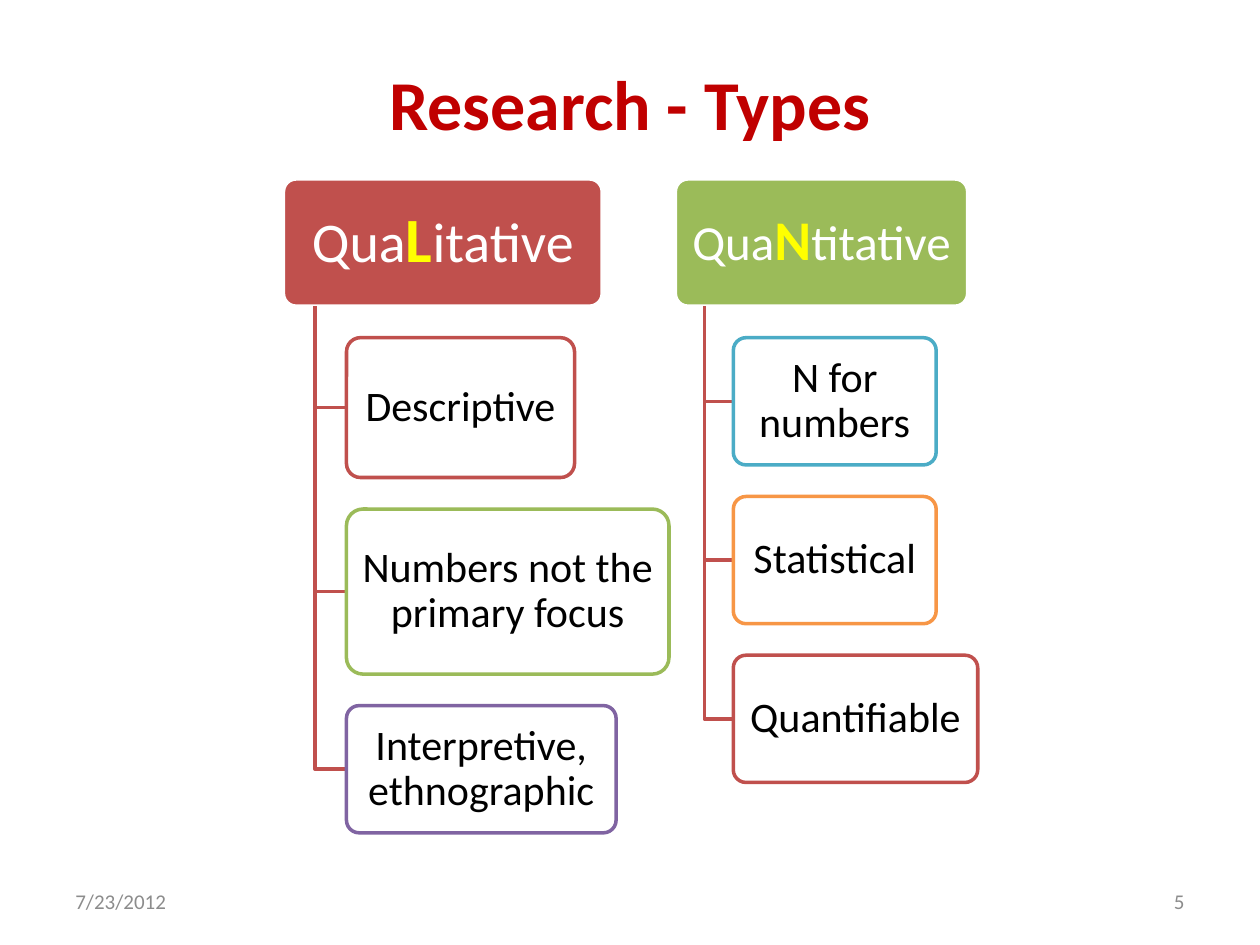
from dataclasses import dataclass

from pptx import Presentation, util as u
from pptx.dml.color import RGBColor
from pptx.enum import shapes as kinds, text as t

FONT = "Calibri"
RED, GREEN, PURPLE, TEAL, ORANGE = "C0504D", "9BBB59", "8064A2", "4BACC6", "F79646"
WHITE, BLACK, YELLOW, GREY = "FFFFFF", "000000", "FFFF00", "8C8C8C"
HEADER_TOP, ROW_HEIGHT, GAP = 1.42, 1.01, 0.25


@dataclass
class Run:
    text: str
    size: float
    color: str
    bold: bool = False


@dataclass
class Box:
    left: float
    top: float
    width: float
    height: float


@dataclass
class Trait:
    text: str
    width: float
    color: str
    height: float = ROW_HEIGHT


@dataclass
class Branch:
    left: float
    width: float
    stem: float
    trait_left: float
    color: str
    inset: float
    heading: list[Run]
    traits: list[Trait]


BRANCHES = [
    Branch(2.25, 2.53, 2.5, 2.75, RED, 0.07,
           [Run("Qua", 32, WHITE), Run("L", 36, YELLOW, True), Run("itative", 32, WHITE)],
           [Trait("Descriptive", 1.81, RED, 1.11),
            Trait("Numbers not the primary focus", 2.56, GREEN, 1.31),
            Trait("Interpretive, ethnographic", 2.14, PURPLE)]),
    Branch(5.36, 2.32, 5.59, 5.82, GREEN, 0.06,
           [Run("Qua", 28, WHITE), Run("N", 32, YELLOW, True), Run("titative", 28, WHITE)],
           [Trait("N for numbers", 1.61, TEAL),
            Trait("Statistical", 1.61, ORANGE),
            Trait("Quantifiable", 1.94, RED)]),
]


def rgb(color: str) -> RGBColor:
    return RGBColor.from_string(color)


def place(box: Box) -> list[int]:
    return [u.Inches(v) for v in (box.left, box.top, box.width, box.height)]


def write(frame, runs: list[Run], align) -> None:
    frame.word_wrap = True
    frame.vertical_anchor = t.MSO_ANCHOR.MIDDLE
    paragraph = frame.paragraphs[0]
    paragraph.alignment = align
    for part in runs:
        run = paragraph.add_run()
        run.text = part.text
        run.font.name = FONT
        run.font.size = u.Pt(part.size)
        run.font.bold = part.bold
        run.font.color.rgb = rgb(part.color)


def outline(shape, color: str) -> None:
    shape.shadow.inherit = False
    shape.line.color.rgb = rgb(color)
    shape.line.width = u.Pt(2)


def add_card(slide, box: Box, fill: str, line: str, runs: list[Run],
             inset: float, inset_top: float) -> None:
    card = slide.shapes.add_shape(kinds.MSO_SHAPE.ROUNDED_RECTANGLE, *place(box))
    card.adjustments[0] = 0.1
    card.fill.solid()
    card.fill.fore_color.rgb = rgb(fill)
    outline(card, line)
    frame = card.text_frame
    frame.margin_left = frame.margin_right = u.Inches(inset)
    frame.margin_top = frame.margin_bottom = u.Inches(inset_top)
    write(frame, runs, t.PP_ALIGN.CENTER)
    frame.paragraphs[0].line_spacing = 0.9


def add_elbow(slide, stem: float, top: float, right: float, bottom: float) -> None:
    builder = slide.shapes.build_freeform(u.Inches(stem), u.Inches(top))
    builder.add_line_segments(
        [(u.Inches(stem), u.Inches(bottom)), (u.Inches(right), u.Inches(bottom))], close=False)
    elbow = builder.convert_to_shape()
    elbow.fill.background()
    outline(elbow, RED)


def add_branch(slide, branch: Branch) -> None:
    add_card(slide, Box(branch.left, HEADER_TOP, branch.width, ROW_HEIGHT),
             branch.color, WHITE, branch.heading, branch.inset, 0.04)
    header_bottom = HEADER_TOP + ROW_HEIGHT
    top = header_bottom + GAP
    for trait in branch.traits:
        add_elbow(slide, branch.stem, header_bottom, branch.trait_left, top + trait.height / 2)
        add_card(slide, Box(branch.trait_left, top, trait.width, trait.height),
                 WHITE, trait.color, [Run(trait.text, 24, BLACK)], 0.05, 0.03)
        top += trait.height + GAP


def add_footer(slide, left: float, text: str, align) -> None:
    footer = slide.shapes.add_textbox(*place(Box(left, 6.95, 2.33, 0.4)))
    write(footer.text_frame, [Run(text, 12, GREY)], align)


def main() -> None:
    deck = Presentation()
    deck.slide_width, deck.slide_height = u.Inches(10), u.Inches(7.5)
    slide = deck.slides.add_slide(deck.slide_layouts[5])

    # Title
    title = slide.shapes.title
    title.left, title.top, title.width, title.height = place(Box(0.5, 0.3, 9, 1.03))
    write(title.text_frame, [Run("Research - Types", 40, "C00000", True)], t.PP_ALIGN.CENTER)

    # Hierarchy of research types
    for branch in BRANCHES:
        add_branch(slide, branch)

    # Date and slide number
    add_footer(slide, 0.5, "7/23/2012", t.PP_ALIGN.LEFT)
    add_footer(slide, 7.17, "5", t.PP_ALIGN.RIGHT)

    deck.save("out.pptx")


if __name__ == "__main__":
    main()
